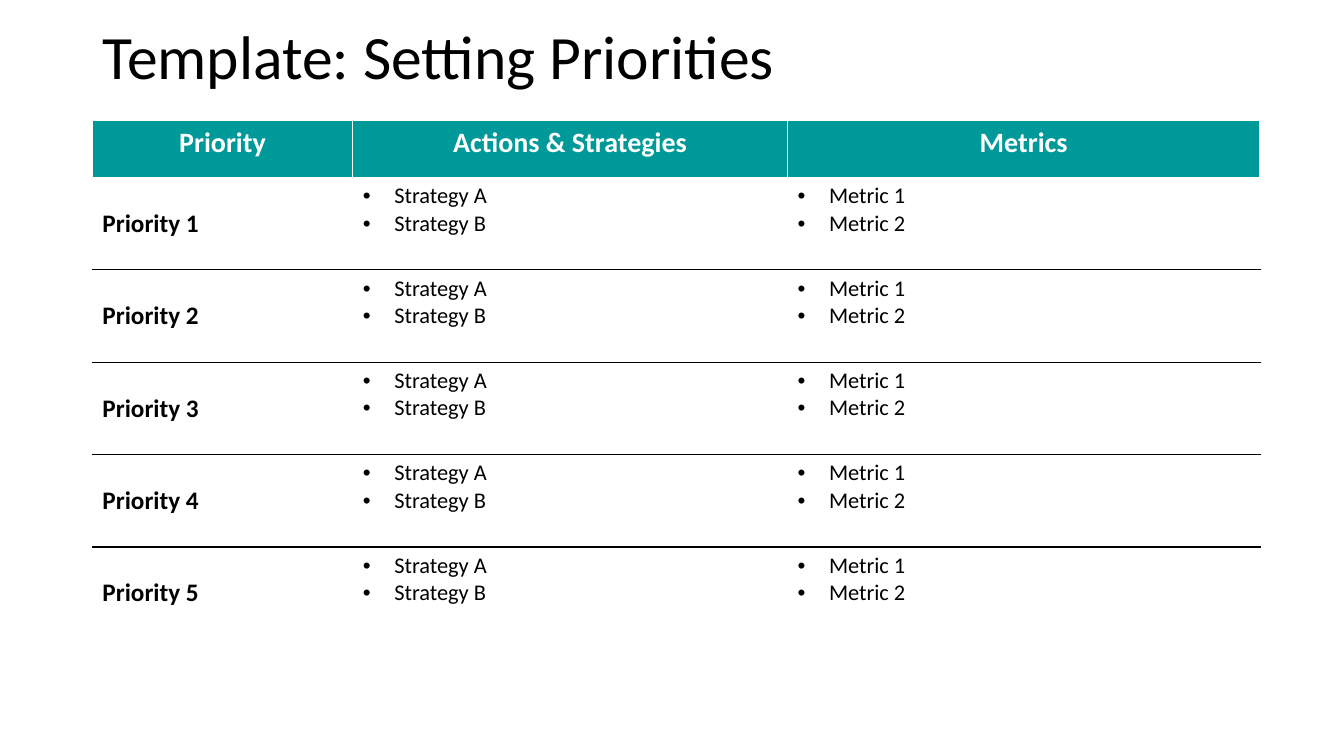
from lxml import etree
from pptx import Presentation
from pptx import util as u
from pptx.dml.color import RGBColor
from pptx.enum import text
from pptx.oxml.ns import qn

EMU_PER_PX = 9525
FONT = "Calibri"
TEAL, WHITE, BLACK = "009999", "FFFFFF", "000000"
HEADINGS = ["Priority", "Actions & Strategies", "Metrics"]
STRATEGIES = ["Strategy A", "Strategy B"]
METRICS = ["Metric 1", "Metric 2"]
PRIORITY_COUNT = 5
COLUMN_WIDTHS = [248, 414, 450]
HEADER_HEIGHT, PRIORITY_HEIGHT = 54, 88


def px(length):
    """Turn whole pixels into EMU."""
    return u.Emu(length * EMU_PER_PX)


def color(hex_string):
    """Turn a hex string into a colour."""
    return RGBColor.from_string(hex_string)


def add_run(paragraph, wording, size, hex_color, bold=False):
    """Add one formatted run to a paragraph."""
    run = paragraph.add_run()
    run.text = wording
    run.font.name = FONT
    run.font.size = u.Pt(size)
    run.font.bold = bold
    run.font.color.rgb = color(hex_color)


def add_bullet(paragraph):
    """Give a paragraph a round bullet with a hanging indent."""
    properties = paragraph._p.get_or_add_pPr()
    properties.set("marL", str(px(30)))
    properties.set("indent", str(-px(30)))
    etree.SubElement(properties, qn("a:buFont"), typeface="Arial")
    etree.SubElement(properties, qn("a:buChar"), char="•")


def style_cell(cell, fill, top, bottom):
    """Set the borders and the fill of a cell."""
    properties = cell._tc.get_or_add_tcPr()
    sides = {"a:lnL": WHITE, "a:lnR": WHITE, "a:lnT": top, "a:lnB": bottom}
    for tag, line_color in sides.items():
        line = etree.SubElement(properties, qn(tag), w=str(u.Pt(1)))
        solid = etree.SubElement(line, qn("a:solidFill"))
        etree.SubElement(solid, qn("a:srgbClr"), val=line_color)
    cell.fill.solid()
    cell.fill.fore_color.rgb = color(fill)


def fill_header(cell, heading):
    """Write a column heading."""
    style_cell(cell, TEAL, WHITE, WHITE)
    paragraph = cell.text_frame.paragraphs[0]
    paragraph.alignment = text.PP_ALIGN.CENTER
    add_run(paragraph, heading, 20, WHITE, True)


def fill_list(cell, items):
    """Write a bulleted list into a cell."""
    frame = cell.text_frame
    for index, item in enumerate(items):
        paragraph = frame.add_paragraph() if index else frame.paragraphs[0]
        add_bullet(paragraph)
        add_run(paragraph, item, 16, BLACK)


def fill_priority(cells, number):
    """Write the row of one priority."""
    top = WHITE if number == 1 else BLACK
    bottom = WHITE if number == PRIORITY_COUNT else BLACK
    for cell in cells:
        style_cell(cell, WHITE, top, bottom)
    name, strategies, metrics = cells
    name.vertical_anchor = text.MSO_ANCHOR.MIDDLE
    add_run(name.text_frame.paragraphs[0], f"Priority {number}", 18, BLACK, True)
    fill_list(strategies, STRATEGIES)
    fill_list(metrics, METRICS)


def add_title(slide, wording):
    """Place and write the slide title."""
    title = slide.shapes.title
    title.left, title.top, title.width, title.height = map(px, (88, 13, 1104, 88))
    frame = title.text_frame
    frame.word_wrap = True
    frame.vertical_anchor = text.MSO_ANCHOR.MIDDLE
    paragraph = frame.paragraphs[0]
    paragraph.alignment = text.PP_ALIGN.LEFT
    paragraph.line_spacing = 0.9
    add_run(paragraph, wording, 44, BLACK)


def add_priority_table(slide):
    """Add the table of priorities."""
    heights = [HEADER_HEIGHT] + [PRIORITY_HEIGHT] * PRIORITY_COUNT
    table = slide.shapes.add_table(
        len(heights), len(COLUMN_WIDTHS),
        px(88), px(115), px(sum(COLUMN_WIDTHS)), px(sum(heights)),
    ).table
    table.horz_banding = False
    for column, width in zip(table.columns, COLUMN_WIDTHS):
        column.width = px(width)
    for row, height in zip(table.rows, heights):
        row.height = px(height)
    for cell, heading in zip(table.rows[0].cells, HEADINGS):
        fill_header(cell, heading)
    for number in range(1, PRIORITY_COUNT + 1):
        fill_priority(list(table.rows[number].cells), number)


def main():
    """Build the slide and save it."""
    presentation = Presentation()
    presentation.slide_width, presentation.slide_height = px(1280), px(720)
    slide = presentation.slides.add_slide(presentation.slide_layouts[5])
    add_title(slide, "Template: Setting Priorities")
    add_priority_table(slide)
    presentation.save("out.pptx")


if __name__ == "__main__":
    main()
